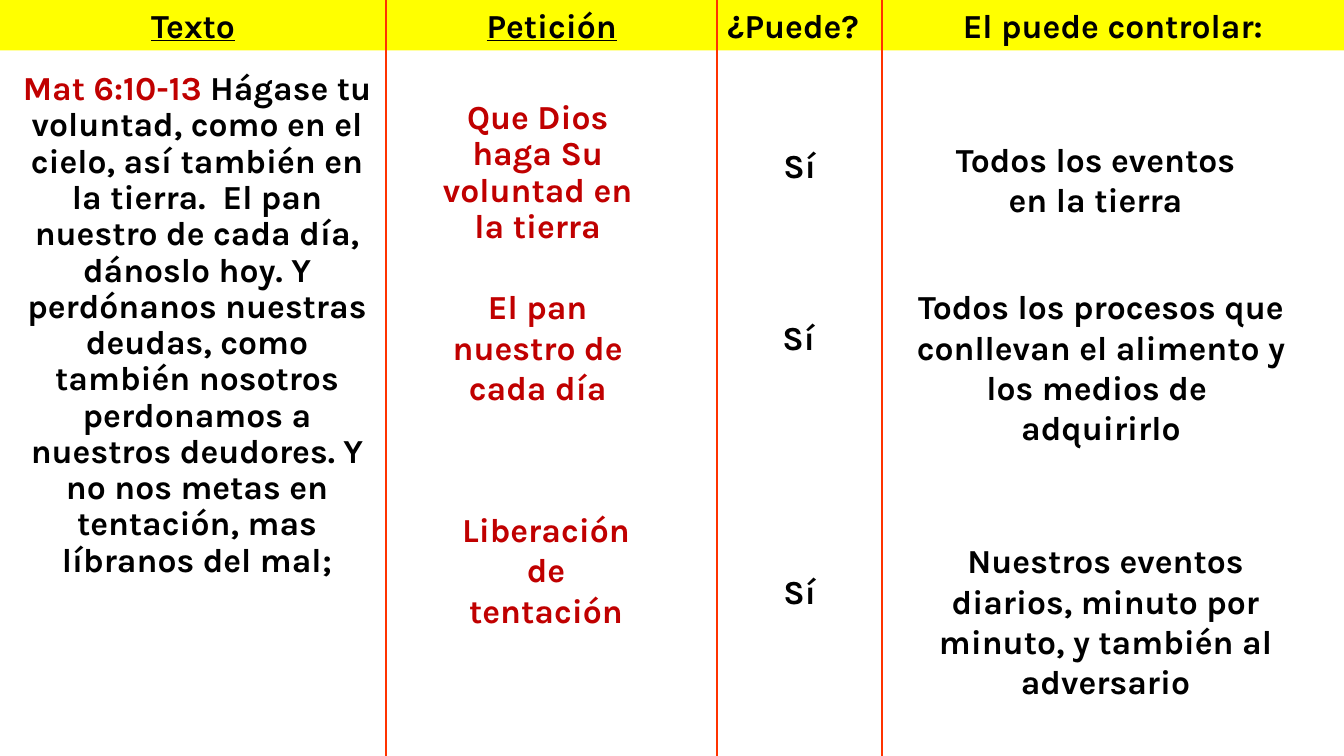
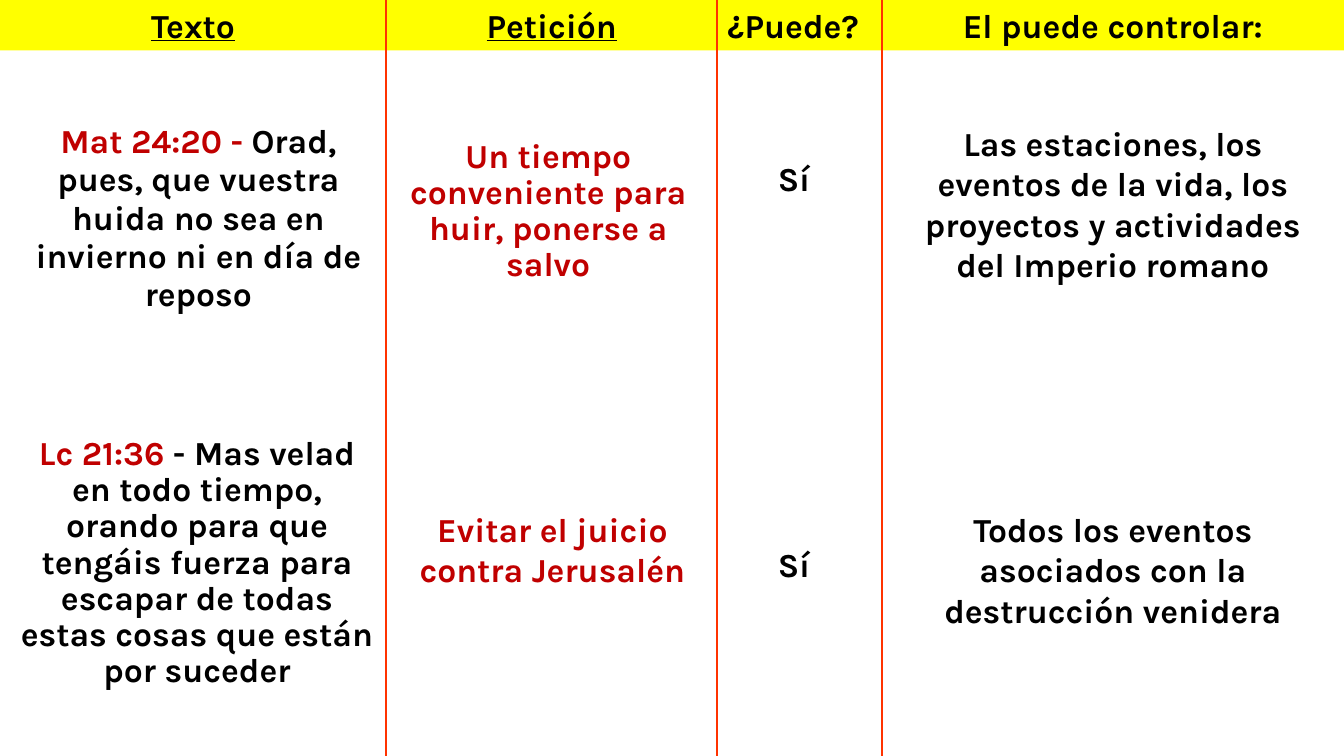
from dataclasses import dataclass

from lxml import etree
from pptx import Presentation
from pptx.dml.color import RGBColor
from pptx.enum.shapes import MSO_CONNECTOR, MSO_SHAPE
from pptx.enum.text import MSO_ANCHOR, MSO_AUTO_SIZE, PP_ALIGN
from pptx.oxml.ns import qn
from pptx.util import Cm, Pt

RECTANGLE = MSO_SHAPE.RECTANGLE
STRAIGHT = MSO_CONNECTOR.STRAIGHT
TOP = MSO_ANCHOR.TOP
GROW = MSO_AUTO_SIZE.SHAPE_TO_FIT_TEXT
LEFT, CENTER = PP_ALIGN.LEFT, PP_ALIGN.CENTER


@dataclass(frozen=True)
class Theme:
    font: str = "Karla"
    size: Pt = Pt(24)
    rule_width: Pt = Pt(1.5)
    black: RGBColor = RGBColor(0x00, 0x00, 0x00)
    red: RGBColor = RGBColor(0xC0, 0x00, 0x00)
    band: RGBColor = RGBColor(0xFF, 0xFF, 0x00)
    rule: RGBColor = RGBColor(0xFF, 0x33, 0x00)


THEME = Theme()
BLACK, RED = THEME.black, THEME.red
SLIDE_WIDTH, SLIDE_HEIGHT = 33.87, 19.05
HEADER_HEIGHT = 1.27

# Column: left edge in cm, heading, alignment, underline
COLUMNS = [
    (0, "Texto", CENTER, True),
    (9.73, "Petición", CENTER, True),
    (18.08, "¿Puede?", LEFT, False),
    (22.22, "El puede controlar:", CENTER, False),
]

# Entry: (left, top, width, height) in cm, line spacing, paragraphs of (text, colour) runs
SLIDES = [
    [
        ((0.23, 1.68, 9.47, 14.1), 0.9, [[
            ("Mat 6:10-13 ", RED),
            ("Hágase tu voluntad, como en el cielo, así también en la tierra.  "
             "El pan nuestro de cada día, dánoslo hoy. Y perdónanos nuestras deudas, "
             "como también nosotros perdonamos a nuestros deudores. "
             "Y no nos metas en tentación, mas líbranos del mal;", BLACK)]]),
        ((10.59, 2.41, 5.92, 3.96), 0.9, [[("Que Dios haga Su voluntad en la tierra", RED)]]),
        ((10.59, 7.09, 5.92, 3.33), 1.0, [[("El pan nuestro de cada día", RED)]]),
        ((10.8, 12.7, 5.92, 3.33), 1.0,
         [[("Liberación", RED)], [("de", RED)], [("tentación", RED)]]),
        ((18.08, 3.53, 4.14, 1.27), 1.0, [[("Sí", BLACK)]]),
        ((18.08, 7.85, 4.09, 1.27), 1.0, [[("Sí", BLACK)]]),
        ((18.08, 14.27, 4.14, 1.27), 1.0, [[("Sí", BLACK)]]),
        ((22.43, 3.38, 10.36, 2.31), 1.0,
         [[("Todos los eventos", BLACK)], [("en la tierra", BLACK)]]),
        ((22.68, 7.09, 10.13, 4.37), 1.0, [[
            ("Todos los procesos que conllevan el alimento y los medios de  adquirirlo", BLACK)]]),
        ((22.68, 13.49, 10.36, 4.37), 1.0, [[
            ("Nuestros eventos diarios, minuto por minuto, y también al adversario", BLACK)]]),
    ],
    [
        ((0.53, 2.97, 8.94, 5.13), 0.95, [[
            ("Mat 24:20 - ", RED),
            ("Orad, pues, que vuestra huida no sea en invierno ni en día de reposo", BLACK)]]),
        ((0.2, 10.87, 9.53, 6.73), 0.9, [[
            ("Lc 21:36 ", RED),
            ("- Mas velad en todo tiempo, orando para que tengáis fuerza para "
             "escapar de todas estas cosas que están por suceder", BLACK)]]),
        ((9.75, 3.38, 8.13, 3.96), 0.9, [[
            ("Un tiempo conveniente para huir, ponerse a salvo", RED)]]),
        ((9.96, 12.7, 7.92, 2.31), 1.0, [[("Evitar el juicio contra Jerusalén", RED)]]),
        ((18.42, 3.86, 3.18, 1.27), 1.0, [[("Sí", BLACK)]]),
        ((18.42, 13.59, 3.18, 1.27), 1.0, [[("Sí", BLACK)]]),
        ((22.43, 2.97, 11.23, 4.37), 1.0, [[
            ("Las estaciones, los eventos de la vida, los proyectos y actividades "
             "del Imperio romano", BLACK)]]),
        ((22.43, 12.7, 11.23, 3.33), 1.0, [[
            ("Todos los eventos asociados con la destrucción venidera", BLACK)]]),
    ],
]


def write_text(shape, paragraphs, spacing=1.0, alignment=CENTER, underline=False):
    text_frame = shape.text_frame
    text_frame.word_wrap = True
    text_frame.auto_size = GROW
    text_frame.vertical_anchor = TOP
    for index, runs in enumerate(paragraphs):
        paragraph = text_frame.add_paragraph() if index else text_frame.paragraphs[0]
        paragraph.alignment = alignment
        paragraph.line_spacing = spacing
        for text, color in runs:
            run = paragraph.add_run()
            run.text = text
            run.font.name = THEME.font
            run.font.size = THEME.size
            run.font.bold = True
            run.font.underline = underline
            run.font.color.rgb = color


def add_column_frame(slide):
    """Draw the heading band of every column and the rules between columns."""
    edges = [column[0] for column in COLUMNS] + [SLIDE_WIDTH]
    for (left, heading, alignment, underline), right in zip(COLUMNS, edges[1:]):
        header = slide.shapes.add_shape(
            RECTANGLE, Cm(left), 0, Cm(right - left), Cm(HEADER_HEIGHT))
        header.shadow.inherit = False
        header.fill.solid()
        header.fill.fore_color.rgb = THEME.band
        header.line.fill.background()
        write_text(header, [[(heading, BLACK)]], alignment=alignment, underline=underline)
    for edge in edges[1:-1]:
        rule = slide.shapes.add_connector(STRAIGHT, Cm(edge), 0, Cm(edge), Cm(SLIDE_HEIGHT))
        rule.line.color.rgb = THEME.rule
        rule.line.width = THEME.rule_width
        etree.SubElement(rule._element.spPr, qn("a:effectLst"))


def main():
    presentation = Presentation()
    presentation.slide_width = Cm(SLIDE_WIDTH)
    presentation.slide_height = Cm(SLIDE_HEIGHT)
    blank_layout = presentation.slide_layouts[6]
    for entries in SLIDES:
        slide = presentation.slides.add_slide(blank_layout)
        add_column_frame(slide)
        for box, spacing, paragraphs in entries:
            text_box = slide.shapes.add_textbox(*map(Cm, box))
            write_text(text_box, paragraphs, spacing)
    presentation.save("out.pptx")


if __name__ == "__main__":
    main()
